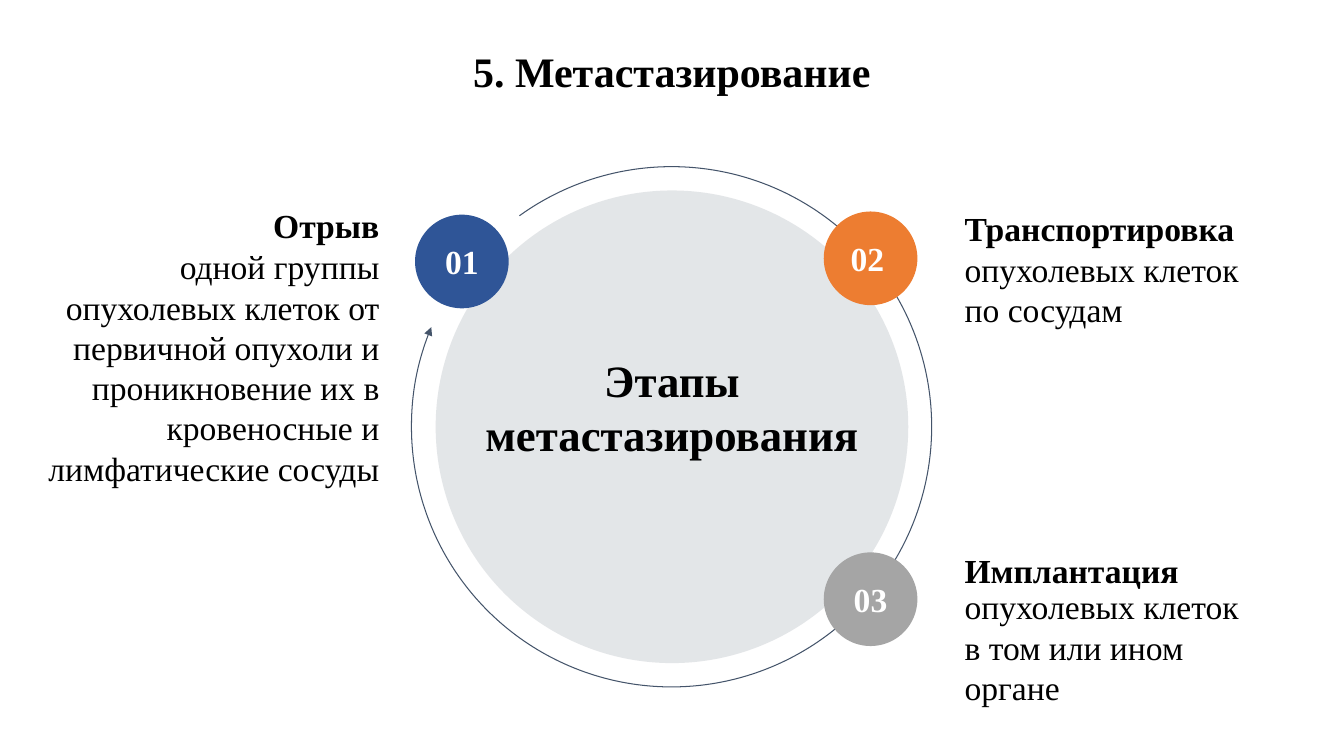
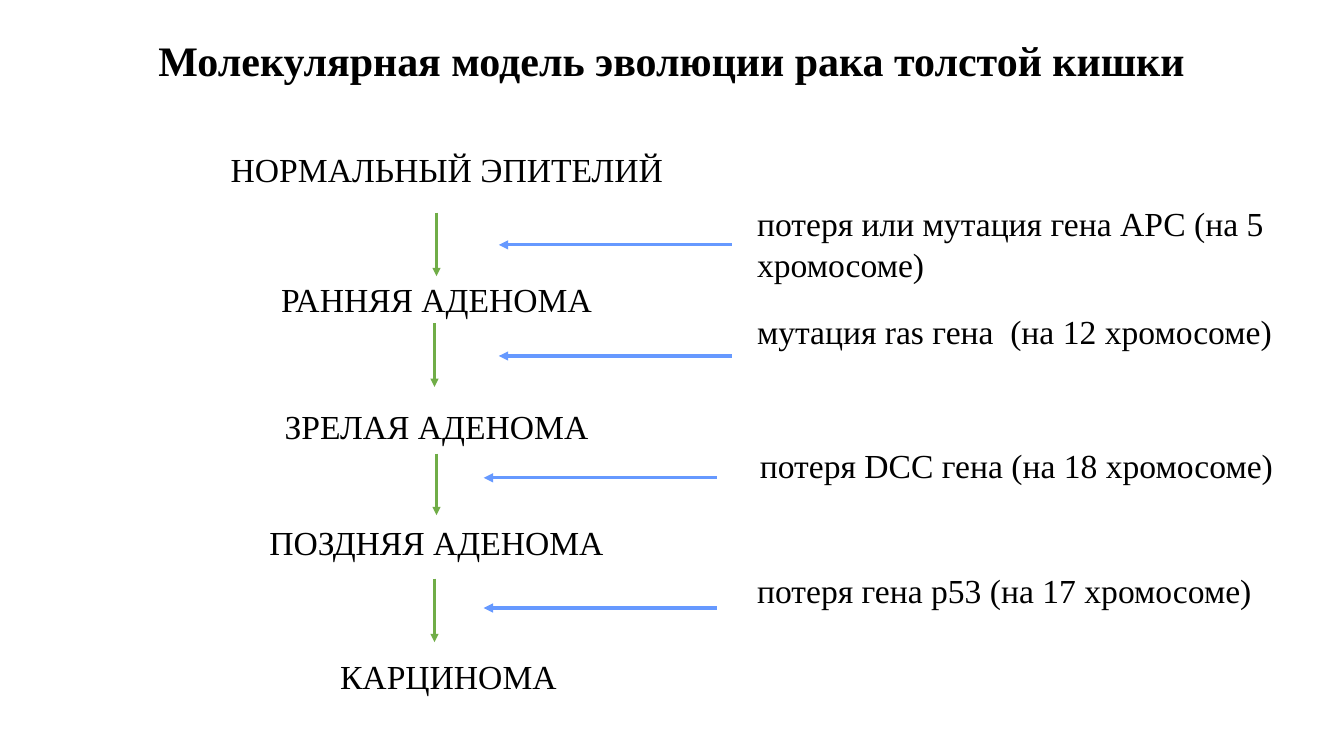
from lxml import etree
from pptx import Presentation
from pptx.dml.color import RGBColor
from pptx.enum.shapes import MSO_CONNECTOR, MSO_SHAPE
from pptx.enum.text import MSO_ANCHOR, PP_ALIGN
from pptx.oxml.ns import qn
from pptx.util import Cm, Pt

LEFT, CENTER, RIGHT = PP_ALIGN.LEFT, PP_ALIGN.CENTER, PP_ALIGN.RIGHT
TOP, MIDDLE = MSO_ANCHOR.TOP, MSO_ANCHOR.MIDDLE
OVAL, ARC = MSO_SHAPE.OVAL, MSO_SHAPE.ARC
STRAIGHT = MSO_CONNECTOR.STRAIGHT

BLACK = RGBColor(0x00, 0x00, 0x00)
WHITE = RGBColor(0xFF, 0xFF, 0xFF)
SLATE = RGBColor(0x44, 0x54, 0x6A)
DISC = RGBColor(0x2C, 0x3E, 0x50)
NAVY = RGBColor(0x2F, 0x55, 0x97)
ORANGE = RGBColor(0xED, 0x7D, 0x31)
GRAY = RGBColor(0xA5, 0xA5, 0xA5)
GREEN = RGBColor(0x70, 0xAD, 0x47)
BLUE = RGBColor(0x66, 0x99, 0xFF)

FONT = "Times New Roman"
WIDTH, HEIGHT = 33.87, 19.05
INSET_X = 0.33
BADGE = 2.36
LABEL_HEIGHT = 1.37
DOWN_LENGTH, CAUSE_LENGTH = 1.6, 5.87

STAGES = [
    ("01", NAVY, CENTER, 10.46, 5.41, "Отрыв",
     "одной группы опухолевых клеток от первичной опухоли и проникновение "
     "их в кровеносные и лимфатические сосуды",
     RIGHT, 0.64, 9.25, 5.68, 9.25, 6.8),
    ("02", ORANGE, LEFT, 20.76, 5.33, "Транспортировка",
     "опухолевых клеток по сосудам",
     LEFT, 23.98, 7.65, 5.76, 7.29, 2.7),
    ("03", GRAY, CENTER, 20.76, 13.92, "Имплантация",
     "опухолевых клеток в том или ином органе",
     LEFT, 23.98, 7.65, 14.36, 16.3, 3.7),
]
TISSUES = [
    ("НОРМАЛЬНЫЙ ЭПИТЕЛИЙ", 11.26, 3.58),
    ("РАННЯЯ АДЕНОМА", 11, 6.86),
    ("ЗРЕЛАЯ АДЕНОМА", 11, 10.06),
    ("ПОЗДНЯЯ АДЕНОМА", 11, 12.98),
    ("КАРЦИНОМА", 11.3, 16.36),
]
MUTATIONS = [
    ("потеря или мутация гена АРС (на 5 хромосоме)", 18.75, 4.94, 2.39),
    ("мутация ras гена  (на 12 хромосоме)", 18.75, 7.65, LABEL_HEIGHT),
    ("потеря DCC гена (на 18 хромосоме)", 18.82, 11.04, LABEL_HEIGHT),
    ("потеря гена p53 (на 17 хромосоме)", 18.75, 14.19, LABEL_HEIGHT),
]
STEPS = [
    (11, 5.36, 18.44, 6.17),
    (10.95, 8.15, 18.44, 8.97),
    (11, 11.38, 18.06, 12.04),
    (10.95, 14.58, 18.06, 15.32),
]


def set_attributes(target, values):
    for name, value in values.items():
        setattr(target, name, value)


def write(shape, text, align=LEFT, size=24, bold=False, color=BLACK,
          anchor=MIDDLE, inset_y=INSET_X):
    frame = shape.text_frame
    set_attributes(frame, {
        "word_wrap": True, "vertical_anchor": anchor,
        "margin_left": Cm(INSET_X), "margin_right": Cm(INSET_X),
        "margin_top": Cm(inset_y), "margin_bottom": Cm(inset_y),
    })
    para = frame.paragraphs[0]
    para.alignment = align
    span = para.add_run()
    span.text = text
    set_attributes(span.font, {"name": FONT, "size": Pt(size), "bold": bold})
    span.font.color.rgb = color


def add_text(page, text, left, top, width, height, **style):
    box = page.shapes.add_textbox(Cm(left), Cm(top), Cm(width), Cm(height))
    write(box, text, **style)
    return box


def add_title(page, text, middle):
    add_text(page, text, 1.2, middle - 0.9, WIDTH - 2.4, 1.8,
             align=CENTER, size=30, bold=True)


def add_label(page, text, left, top, width, height=LABEL_HEIGHT, align=LEFT):
    return add_text(page, text, left, top, width, height,
                    align=align, anchor=TOP, inset_y=0.18)


def add_circle(page, left, top, size, color):
    circle = page.shapes.add_shape(OVAL, Cm(left), Cm(top), Cm(size), Cm(size))
    circle.shadow.inherit = False
    circle.fill.solid()
    circle.fill.fore_color.rgb = color
    circle.line.fill.background()
    return circle


def style_arrow(shape, color, weight):
    shape.line.color.rgb = color
    shape.line.width = Pt(weight)
    outline = shape.line._get_or_add_ln()
    etree.SubElement(outline, qn("a:tailEnd"), type="triangle")


def add_arrow(page, x1, y1, x2, y2, color, weight):
    arrow = page.shapes.add_connector(STRAIGHT, Cm(x1), Cm(y1), Cm(x2), Cm(y2))
    style_arrow(arrow, color, weight)
    etree.SubElement(arrow._element.spPr, qn("a:effectLst"))
    return arrow


def add_cycle(page):
    ring = page.shapes.add_shape(ARC, Cm(10.37), Cm(4.2), Cm(13.11), Cm(13.11))
    ring.shadow.inherit = False
    ring.fill.background()
    ring.adjustments[0] = 140.53
    ring.adjustments[1] = 121.51
    style_arrow(ring, SLATE, 0.75)
    disc = add_circle(page, 10.98, 4.8, 11.91, DISC)
    tint = disc._element.spPr.find(".//" + qn("a:srgbClr"))
    etree.SubElement(tint, qn("a:alpha"), val="13000")
    add_text(page, "Этапы метастазирования", 11.79, 8.74, 10.29, 3,
             align=CENTER, size=32, bold=True)


def add_stage(page, number, color, number_align, badge_left, badge_top,
              heading, body, align, left, width, heading_middle,
              body_middle, body_height):
    badge = add_circle(page, badge_left, badge_top, BADGE, color)
    write(badge, number, align=number_align, bold=True, color=WHITE)
    add_text(page, heading, left, heading_middle - 0.85, width, 1.7,
             align=align, bold=True)
    add_text(page, body, left, body_middle - body_height / 2, width,
             body_height, align=align)


def build_metastasis(page):
    add_title(page, "5. Метастазирование", 1.78)
    add_cycle(page)
    for stage in STAGES:
        add_stage(page, *stage)


def build_evolution(page):
    add_title(page, "Молекулярная модель эволюции рака толстой кишки", 1.5)
    tissues = [add_label(page, text, middle - 6, top, 12, align=CENTER)
               for text, middle, top in TISSUES]
    for text, left, top, height in MUTATIONS:
        add_label(page, text, left, top, WIDTH - left, height)
    downs = []
    for x, top, cause_x, cause_y in STEPS:
        downs.append(add_arrow(page, x, top, x, top + DOWN_LENGTH, GREEN, 1.5))
        add_arrow(page, cause_x, cause_y, cause_x - CAUSE_LENGTH, cause_y,
                  BLUE, 2.25)
    downs[2].begin_connect(tissues[2], 2)
    downs[2].end_connect(tissues[3], 0)


def main():
    deck = Presentation()
    deck.slide_width, deck.slide_height = Cm(WIDTH), Cm(HEIGHT)
    for build in (build_metastasis, build_evolution):
        build(deck.slides.add_slide(deck.slide_layouts[6]))
    deck.save("out.pptx")


if __name__ == "__main__":
    main()
